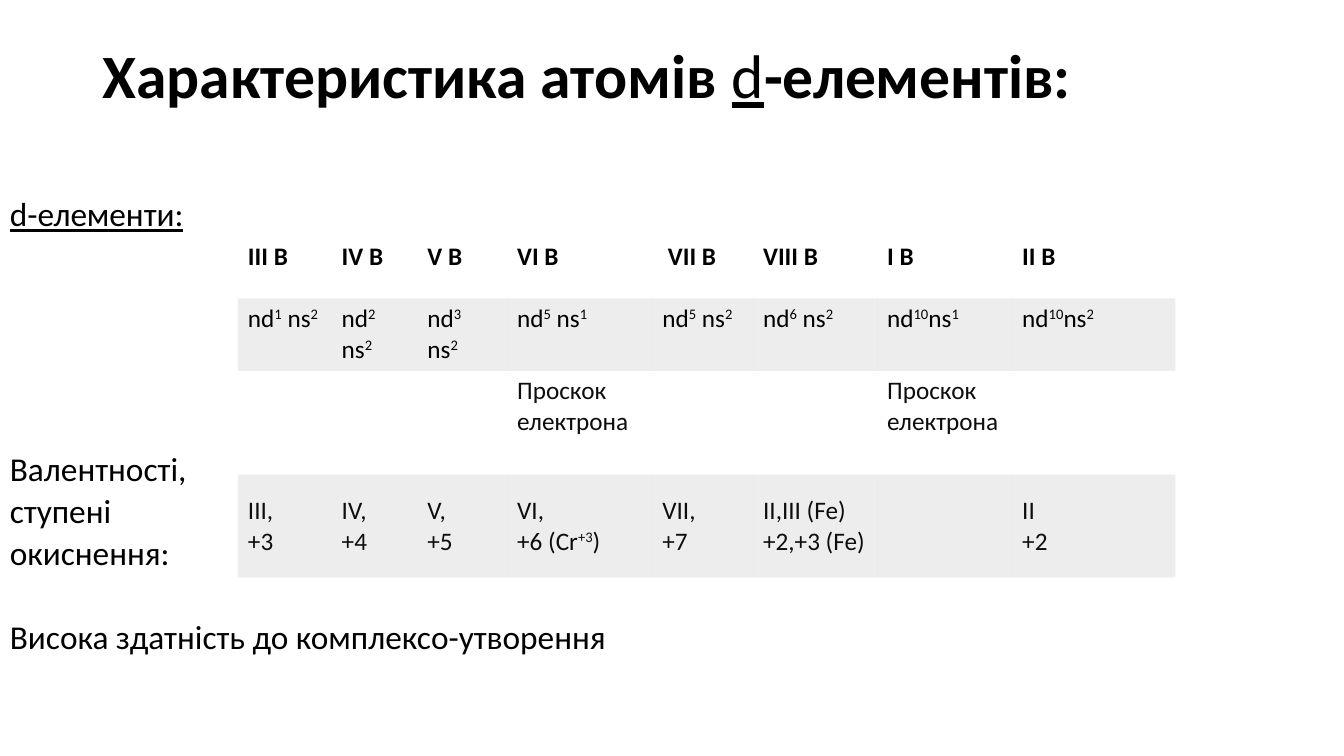
from lxml.etree import SubElement as Sub
from pptx import Presentation as Deck
from pptx.dml.color import RGBColor as Rgb
from pptx.enum.text import MSO_ANCHOR as Anchor, PP_ALIGN as Align
from pptx.oxml.ns import qn
from pptx.util import Inches, Pt

HUES = {"ink": "000000", "soft": "0D0D0D", "band": "A5A5A5"}
PLAIN = "{2D5ABB26-0587-4C30-8999-92F81FD0307C}"
COLS = [0.93, 0.85, 0.89, 1.44, 1, 1.23, 1.34, 1.62]
ROWS = [0.61, 0.72, 1.03, 1.02]
HEADS = ["III В", "IV В", "V В", "VI В", " VII В", "VIII В", "I В", "II В"]
SHELLS = ["nd^1^ ns^2", "nd^2^ ns^2", "nd^3^ ns^2", "nd^5^ ns^1",
          "nd^5^ ns^2", "nd^6^ ns^2", "nd^10^ns^1", "nd^10^ns^2"]
LEAP = "Проскок електрона"
LEAPS = [LEAP if col in (3, 6) else "" for col in range(len(COLS))]
STATES = ["ІІІ, \n+3", "IV,\n+4", "V,\n+5", "VI,\n+6 (Cr^+3^)", "VII,\n+7",
          "II,III (Fe)\n+2,+3 (Fe)", "", "II\n+2"]
NOTES = [("d-елементи:", 10), ("Валентності,", 161.5), ("ступені", 10),
         ("окиснення:", 10), ("Висока здатність до комплексо-утворення", 40.3)]


class Page:
    """Hold the style and the slide; places are percent of the slide's size."""

    def __init__(self, deck, face="Calibri"):
        self.deck, self.face = deck, face
        self.slide = deck.slides.add_slide(deck.slide_layouts[5])

    def box(self, left, top, wide, high):
        w, h = self.deck.slide_width / 100, self.deck.slide_height / 100
        return int(left * w), int(top * h), int(wide * w), int(high * h)

    def run(self, para, text, size, hue="ink", bold=False, line=False, lift=False):
        run = para.add_run()
        run.text = text
        font = run.font
        font.name, font.size, font.bold, font.underline = self.face, Pt(size), bold, line
        font.color.rgb = Rgb.from_string(HUES[hue])
        if lift:
            run._r.get_or_add_rPr().set("baseline", "30000")

    def title(self, place, parts, size):
        shape = self.slide.shapes.title
        shape.left, shape.top, shape.width, shape.height = self.box(*place)
        frame = shape.text_frame
        frame.word_wrap, frame.vertical_anchor = True, Anchor.TOP
        para = frame.paragraphs[0]
        para.alignment, para.line_spacing = Align.LEFT, 0.9
        for text, mark in parts:
            self.run(para, text, size, bold=not mark, line=mark)

    def notes(self, place, items, size):
        frame = self.slide.shapes.add_textbox(*self.box(*place)).text_frame
        frame.word_wrap = True
        for i, (text, gap) in enumerate(items):
            para = frame.add_paragraph() if i else frame.paragraphs[0]
            para.line_spacing, para.space_before = 0.7, Pt(gap)
            self.run(para, text, size, line=i == 0)

    def cell(self, cell, text, size, hue, bold, band, mid):
        cell.vertical_anchor = Anchor.MIDDLE if mid else Anchor.TOP
        if band:
            cell.fill.solid()
            cell.fill.fore_color.rgb = Rgb.from_string(HUES["band"])
            tint = cell._tc.tcPr.find(".//" + qn("a:srgbClr"))
            Sub(tint, qn("a:alpha"), val="20000")
        else:
            cell.fill.background()
        frame = cell.text_frame
        for i, row in enumerate(text.split("\n")):
            para = frame.add_paragraph() if i else frame.paragraphs[0]
            for j, part in enumerate(row.split("^")):
                if part:
                    self.run(para, part, size, hue, bold, lift=j % 2 == 1)

    def table(self, place, data, size):
        left, top, wide, high = self.box(*place)
        grid = self.slide.shapes.add_table(
            len(ROWS), len(COLS), left, top, wide, high).table
        grid.first_row = grid.horz_banding = False
        grid._tbl.tblPr.find(qn("a:tableStyleId")).text = PLAIN
        for col, part in zip(grid.columns, COLS):
            col.width = int(wide * part / sum(COLS))
        for row, part in zip(grid.rows, ROWS):
            row.height = int(high * part / sum(ROWS))
        for r, row in enumerate(data):
            for c, text in enumerate(row):
                self.cell(grid.cell(r, c), text, size, "soft" if r > 1 else "ink",
                          r == 0, r % 2 == 1, r == 3)


def main():
    deck = Deck()
    deck.slide_width, deck.slide_height = Inches(13.33), Inches(7.5)
    page = Page(deck)
    page.title((6.9, 5.33, 86.27, 19.33), [("Характеристика атомів ", False),
               ("d", True), ("-елементів:", False)], 44)
    page.notes((0, 26.4, 100, 63.47), NOTES, 23.8)
    page.table((17.7, 31.33, 69.77, 45.07), [HEADS, SHELLS, LEAPS, STATES], 18)
    deck.save("out.pptx")


if __name__ == "__main__":
    main()
